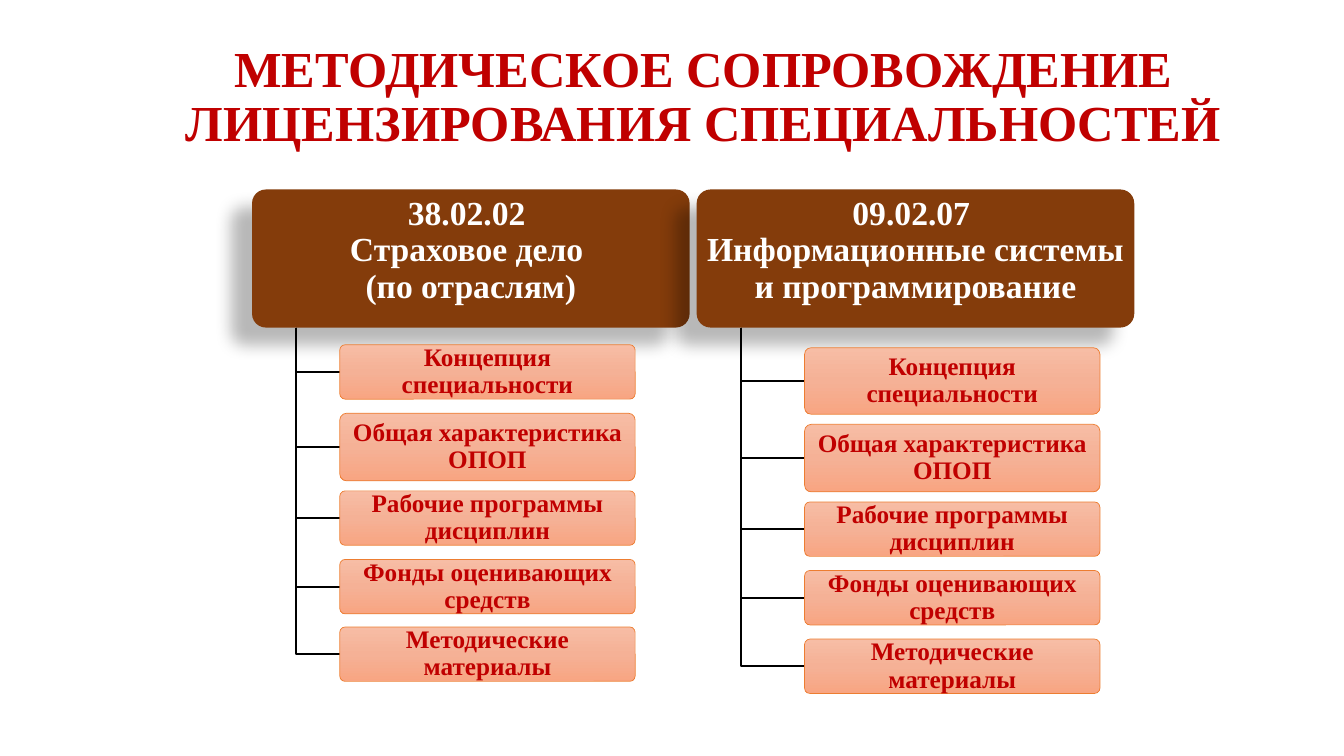
import copy
import pptx
import pptx.dml.color
import pptx.enum.shapes
import pptx.enum.text
import pptx.oxml
import pptx.oxml.ns
import pptx.util
from pptx.util import Inches, Pt

TITLE = "МЕТОДИЧЕСКОЕ СОПРОВОЖДЕНИЕ ЛИЦЕНЗИРОВАНИЯ СПЕЦИАЛЬНОСТЕЙ"
DOCUMENTS = [
    "Концепция специальности",
    "Общая характеристика ОПОП",
    "Рабочие программы дисциплин",
    "Фонды оценивающих средств",
    "Методические материалы",
]
# (heading, heading left, documents left, [(top, height) of each document])
SPECIALTIES = [
    ("38.02.02 \vСтраховое дело \v(по отраслям)", 2.5, 3.37,
     [(3.42, 0.54), (4.1, 0.67), (4.87, 0.54), (5.55, 0.54), (6.22, 0.54)]),
    ("09.02.07 \vИнформационные системы и программирование", 6.91, 7.98,
     [(3.45, 0.66), (4.21, 0.67), (4.98, 0.54), (5.66, 0.54), (6.34, 0.54)]),
]
HEAD_TOP, HEAD_W, HEAD_H = 1.88, 4.34, 1.37
DOC_W = 2.93
TRUNK_OFFSET = 0.44
RED, WHITE, BLACK, BROWN, ORANGE = "C00000", "FFFFFF", "000000", "843C0B", "ED7D31"
DOC_GRADIENT = [(0, "F7BDA5"), (0.5, "F5B196"), (1, "F8A582")]
SHADOW = (
    f'<a:effectLst {pptx.oxml.ns.nsdecls("a")}>'
    f'<a:outerShdw blurRad="{Pt(11.8)}" dist="{Pt(19.7)}" dir="{141 * 60000}" '
    'algn="ctr" rotWithShape="0"><a:srgbClr val="000000"><a:alpha val="28000"/>'
    '</a:srgbClr></a:outerShdw></a:effectLst>'
)


def rgb(hex_color):
    return pptx.dml.color.RGBColor.from_string(hex_color)


def write(sp, text, size, color, anchor, margins):
    tf = sp.text_frame
    tf.word_wrap = True
    tf.vertical_anchor = anchor
    tf.margin_left = tf.margin_right = Inches(margins[0])
    tf.margin_top = tf.margin_bottom = Inches(margins[1])
    p = tf.paragraphs[0]
    p.text = text
    p.alignment = pptx.enum.text.PP_ALIGN.CENTER
    p.line_spacing = 0.9
    p.font.name = "Times New Roman"
    p.font.size = Pt(size)
    p.font.bold = True
    p.font.color.rgb = rgb(color)


def add_box(s, left, top, width, height):
    sp = s.shapes.add_shape(
        pptx.enum.shapes.MSO_SHAPE.ROUNDED_RECTANGLE,
        Inches(left), Inches(top), Inches(width), Inches(height))
    sp.adjustments[0] = 0.1
    return sp


def add_heading(s, text, left):
    sp = add_box(s, left, HEAD_TOP, HEAD_W, HEAD_H)
    sp.fill.solid()
    sp.fill.fore_color.rgb = rgb(BROWN)
    sp.line.fill.background()
    sp._element.spPr.append(pptx.oxml.parse_xml(SHADOW))
    write(sp, text, 24, WHITE, pptx.enum.text.MSO_ANCHOR.TOP, (0.05, 0.03))


def add_branch(s, trunk_x, doc_x, doc_y):
    """Draw the elbow from the foot of a heading to the side of a document."""
    top = HEAD_TOP + HEAD_H
    builder = s.shapes.build_freeform(Inches(trunk_x), Inches(top))
    builder.add_line_segments(
        [(Inches(trunk_x), Inches(doc_y)), (Inches(doc_x), Inches(doc_y))],
        close=False)
    sp = builder.convert_to_shape()
    sp.shadow.inherit = False
    sp.fill.background()
    sp.line.color.rgb = rgb(BLACK)
    sp.line.width = Pt(1.5)


def add_document(s, text, left, top, height):
    sp = add_box(s, left, top, DOC_W, height)
    sp.shadow.inherit = False
    sp.fill.gradient()
    sp.fill.gradient_angle = 270
    first_stop = sp._element.spPr.find(".//" + pptx.oxml.ns.qn("a:gs"))
    first_stop.addnext(copy.deepcopy(first_stop))
    for stop, (position, color) in zip(sp.fill.gradient_stops, DOC_GRADIENT):
        stop.position = position
        stop.color.rgb = rgb(color)
    sp.line.color.rgb = rgb(ORANGE)
    sp.line.width = Pt(0.5)
    write(sp, text, 18, RED, pptx.enum.text.MSO_ANCHOR.MIDDLE, (0.04, 0.03))


def main():
    prs = pptx.Presentation()
    prs.slide_width, prs.slide_height = Inches(13.33), Inches(7.5)
    s = prs.slides.add_slide(prs.slide_layouts[6])

    title = s.shapes.add_textbox(Inches(1.23), Inches(0.25), Inches(11.5), Inches(1.45))
    write(title, TITLE, 36, RED, pptx.enum.text.MSO_ANCHOR.MIDDLE, (0.1, 0.05))

    for heading, head_left, doc_left, rows in SPECIALTIES:
        add_heading(s, heading, head_left)
        for document, (top, height) in zip(DOCUMENTS, rows):
            add_branch(s, head_left + TRUNK_OFFSET, doc_left, top + height / 2)
            add_document(s, document, doc_left, top, height)

    prs.save("out.pptx")


if __name__ == "__main__":
    main()
